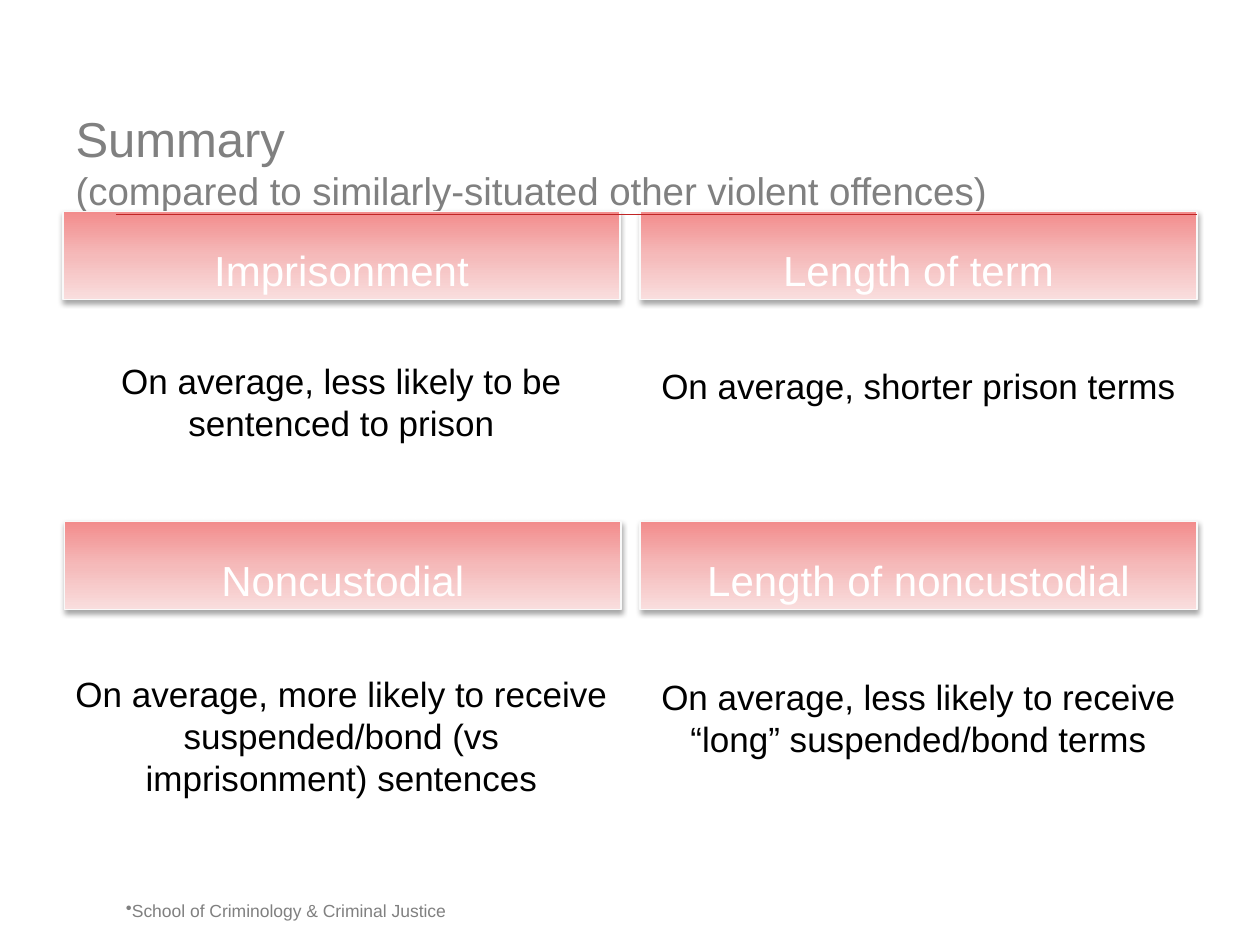
from copy import deepcopy
from dataclasses import dataclass

from lxml.etree import SubElement
from pptx import Presentation
from pptx.dml.color import RGBColor
from pptx.enum.shapes import MSO_CONNECTOR, MSO_SHAPE
from pptx.enum.text import MSO_ANCHOR, MSO_AUTO_SIZE, PP_ALIGN
from pptx.oxml.ns import qn
from pptx.util import Inches, Pt


@dataclass(frozen=True)
class Theme:
    font: str = "Arial"
    grey: str = "808080"
    black: str = "000000"
    white: str = "FFFFFF"
    rule: str = "C02424"
    border: str = "F9F9F9"
    gradient: tuple = ((0, "F28C8C"), (0.5, "F5BABA"), (1, "F9DEDE"))
    title: int = 28
    subtitle: int = 22
    header: int = 24
    body: int = 20
    footer: int = 10


class SlideBuilder:
    def __init__(self, slide, theme):
        self.slide, self.theme = slide, theme

    def add_run(self, p, text, size, color):
        r = p.add_run()
        r.text = text
        r.font.name = self.theme.font
        r.font.size = Pt(size)
        r.font.color.rgb = RGBColor.from_string(color)

    def frame(self, sp, anchor, top=0.05, bottom=0.05):
        tf = sp.text_frame
        tf.word_wrap = True
        tf.auto_size = MSO_AUTO_SIZE.NONE
        tf.vertical_anchor = anchor
        tf.margin_left = tf.margin_right = Inches(0.1)
        tf.margin_top, tf.margin_bottom = Inches(top), Inches(bottom)
        return tf.paragraphs[0]

    def title(self, text, subtitle, x, y, w, h):
        sp = self.slide.shapes.title
        sp.left, sp.top, sp.width, sp.height = map(Inches, (x, y, w, h))
        p = self.frame(sp, MSO_ANCHOR.MIDDLE)
        p.alignment = PP_ALIGN.LEFT
        self.add_run(p, text, self.theme.title, self.theme.grey)
        p.add_line_break()
        self.add_run(p, subtitle, self.theme.subtitle, self.theme.grey)

    def header(self, text, x, y, w, h):
        sp = self.slide.shapes.add_shape(
            MSO_SHAPE.RECTANGLE, *map(Inches, (x, y, w, h)))
        # Three-stop gradient, top to bottom
        sp.fill.gradient()
        sp.fill.gradient_angle = 270
        stops = sp._element.spPr.find(".//" + qn("a:gsLst"))
        stops.insert(1, deepcopy(stops[0]))
        for stop, (position, color) in zip(sp.fill.gradient_stops, self.theme.gradient):
            stop.position = position
            stop.color.rgb = RGBColor.from_string(color)
        sp.line.color.rgb = RGBColor.from_string(self.theme.border)
        sp.line.width = Pt(0.75)
        # Soft shadow straight below
        sp.shadow.inherit = False
        effects = sp._element.spPr.find(qn("a:effectLst"))
        shadow = SubElement(effects, qn("a:outerShdw"), blurRad=str(Pt(3.1)),
                            dist=str(Pt(1.8)), dir="5400000", rotWithShape="0")
        color = SubElement(shadow, qn("a:srgbClr"), val=self.theme.black)
        SubElement(color, qn("a:alpha"), val="35000")
        p = self.frame(sp, MSO_ANCHOR.BOTTOM, 0, 0.04)
        p.alignment = PP_ALIGN.CENTER
        self.add_run(p, text, self.theme.header, self.theme.white)

    def body(self, text, x, y, w, h):
        sp = self.slide.shapes.add_textbox(*map(Inches, (x, y, w, h)))
        p = self.frame(sp, MSO_ANCHOR.TOP, 0.47, 0.04)
        p.alignment = PP_ALIGN.CENTER
        self.add_run(p, text, self.theme.body, self.theme.black)

    def rule(self, x1, y1, x2, y2):
        line = self.slide.shapes.add_connector(
            MSO_CONNECTOR.STRAIGHT, *map(Inches, (x1, y1, x2, y2)))
        line.line.color.rgb = RGBColor.from_string(self.theme.rule)
        line.line.width = Pt(0.25)
        SubElement(line._element.spPr, qn("a:effectLst"))

    def footer(self, text, x, y, w, h):
        sp = self.slide.shapes.add_textbox(*map(Inches, (x, y, w, h)))
        p = self.frame(sp, MSO_ANCHOR.TOP)
        SubElement(p._p.get_or_add_pPr(), qn("a:buChar"), char="•")
        self.add_run(p, text, self.theme.footer, self.theme.grey)


def main():
    prs = Presentation()
    prs.slide_width, prs.slide_height = Inches(10), Inches(7.5)
    s = SlideBuilder(prs.slides.add_slide(prs.slide_layouts[5]), Theme())

    left, right, width = 0.5, 5.08, 4.42
    header_h, body_h = 0.7, 1.92
    top_row, bottom_row = 1.68, 4.14

    # Title
    s.title("Summary", "(compared to similarly-situated other violent offences)",
            left, 0.84, 9, 0.87)

    # Top headers, with the rule over them
    s.header("Imprisonment", left, top_row, width, header_h)
    s.header("Length of term", right, top_row, width, header_h)
    s.rule(0.92, 1.7, 9.5, 1.7)

    # Bottom headers
    s.header("Noncustodial", left + 0.01, bottom_row, width, header_h)
    s.header("Length of noncustodial", right, bottom_row, width, header_h)

    # Findings
    for text, x, y, h in (
        ("On average, less likely to be sentenced to prison", left, 2.38, body_h),
        ("On average, shorter prison terms", right, 2.42, body_h),
        ("On average, more likely to receive suspended/bond (vs imprisonment) sentences",
         left, 4.87, 2.11),
        ("On average, less likely to receive “long” suspended/bond terms",
         right, 4.89, body_h),
    ):
        s.body(text, x, y, width, h)

    # Footer
    s.footer("School of Criminology & Criminal Justice", 0.9, 7.09, 8.66, 0.36)

    prs.save("out.pptx")


if __name__ == "__main__":
    main()
